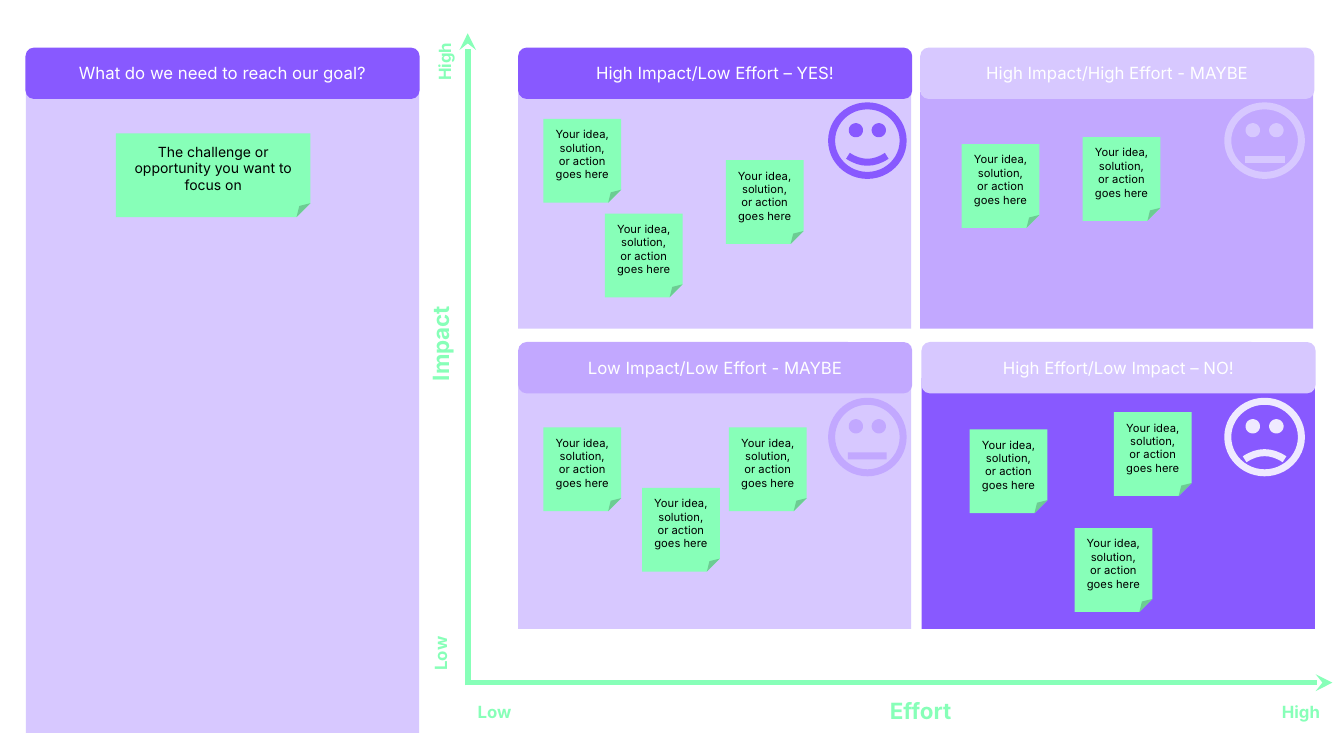
from lxml import etree
from pptx import Presentation
from pptx.dml.color import RGBColor
from pptx.enum.shapes import MSO_CONNECTOR, MSO_SHAPE
from pptx.enum.text import MSO_ANCHOR, PP_ALIGN
from pptx.oxml.ns import qn
from pptx.util import Pt

RECT, ROUND = MSO_SHAPE.RECTANGLE, MSO_SHAPE.ROUNDED_RECTANGLE
NOTE, FACE = MSO_SHAPE.FOLDED_CORNER, MSO_SHAPE.SMILEY_FACE
STRAIGHT = MSO_CONNECTOR.STRAIGHT
MIDDLE, CENTER, LEFT = MSO_ANCHOR.MIDDLE, PP_ALIGN.CENTER, PP_ALIGN.LEFT

COLORS = {
    "violet": "8859FF", "lilac": "C2A8FF", "lavender": "D7C8FF", "mist": "EFEAFF",
    "mint": "87FFB8", "white": "FFFFFF", "black": "000000",
}
RGB = {name: RGBColor.from_string(value) for name, value in COLORS.items()}

prs = Presentation()
prs.slide_width, prs.slide_height = Pt(960), Pt(540)
s = prs.slides.add_slide(prs.slide_layouts[6])


def add_block(kind, x, y, w, h, fill=None):
    sp = s.shapes.add_shape(kind, Pt(x), Pt(y), Pt(w), Pt(h))
    sp.shadow.inherit = False
    sp.line.fill.background()
    if fill:
        sp.fill.solid()
        sp.fill.fore_color.rgb = RGB[fill]
    else:
        sp.fill.background()
    return sp


def write(sp, text, size, color, align=CENTER, bold=False):
    tf = sp.text_frame
    tf.word_wrap = True
    p = tf.paragraphs[0]
    p.alignment = align
    r = p.add_run()
    r.text = text
    for name, value in {"name": "Inter", "size": Pt(size), "bold": bold}.items():
        setattr(r.font, name, value)
    r.font.color.rgb = RGB[color]
    return tf


panels = [
    (18.6, 63.4, 460.1, "lavender"),
    (658.4, 270, 179.3, "violet"),
    (370.1, 253.4, 195.8, "lavender"),
    (657.3, 65.5, 169.2, "lilac"),
    (370.1, 62, 172.8, "lavender"),
]
for x, y, h, fill in panels:
    add_block(RECT, x, y, 280.8, h, fill)

headers = [
    (657.3, 34, "lavender", "High Impact/High Effort - MAYBE"),
    (370.1, 34, "violet", "High Impact/Low Effort – YES!"),
    (370.1, 244.3, "lilac", "Low Impact/Low Effort - MAYBE"),
    (658.2, 244.3, "lavender", "High Effort/Low Impact – NO!"),
    (18.2, 34, "violet", "What do we need to reach our goal?"),
]
for x, y, fill, text in headers:
    sp = add_block(ROUND, x, y, 281.5, 36.7, fill)
    write(sp, text, 12, "white").vertical_anchor = MIDDLE

axes = [(334.1, 487.6, 951.8, 487.6), (334.1, 489.6, 334.1, 23.8)]
for ends in axes:
    cx = s.shapes.add_connector(STRAIGHT, *map(Pt, ends))
    cx.line.color.rgb = RGB["mint"]
    cx.line.width = Pt(4)
    etree.SubElement(cx.line._get_or_add_ln(), qn("a:tailEnd"), type="stealth")
    etree.SubElement(cx._element.spPr, qn("a:effectLst"))

axis_labels = [
    ("Effort", 628.6, 494.6, 77, 26.6, 16, 0),
    ("Impact", 273.6, 224.6, 82.8, 26.6, 16, 270),
    ("High", 908.6, 497.5, 43.2, 21.6, 12, 0),
    ("Low", 334.1, 498, 43.2, 21.6, 12, 0),
    ("High", 295.9, 32.4, 43.2, 21.6, 12, 270),
    ("Low", 293, 453.6, 43.2, 21.6, 12, 270),
]
for text, x, y, w, h, size, angle in axis_labels:
    sp = s.shapes.add_textbox(Pt(x), Pt(y), Pt(w), Pt(h))
    sp.rotation = angle
    write(sp, text, size, "mint", LEFT, True)

faces = [
    (594, 75.6, 51.1, 49.7, 0.047, "violet"),
    (594, 286.6, 51.1, 51.1, 0, "lilac"),
    (877, 75.6, 52.6, 49.7, 0, "lavender"),
    (877, 286.6, 52.6, 51.1, -0.047, "mist"),
]
for x, y, w, h, smile, color in faces:
    sp = add_block(FACE, x, y, w, h)
    sp.adjustments[0] = smile
    sp.line.color.rgb = RGB[color]
    sp.line.width = Pt(5)

challenge = add_block(NOTE, 82.8, 95.3, 139, 59.8, "mint")
write(challenge, "The challenge or opportunity you want to focus on", 10, "black").vertical_anchor = MIDDLE

ideas = [
    (388.1, 85), (518.4, 114.5), (432, 152.6),
    (388.1, 305.3), (520.6, 305.3), (458.6, 348.5),
    (773.3, 97.9), (686.9, 103),
    (692.6, 306.7), (795.6, 294.5), (767.5, 377.3),
]
for x, y in ideas:
    sp = add_block(NOTE, x, y, 55.6, 59.8, "mint")
    write(sp, "Your idea, solution, or action goes here", 8, "black").vertical_anchor = MIDDLE

prs.save("out.pptx")
